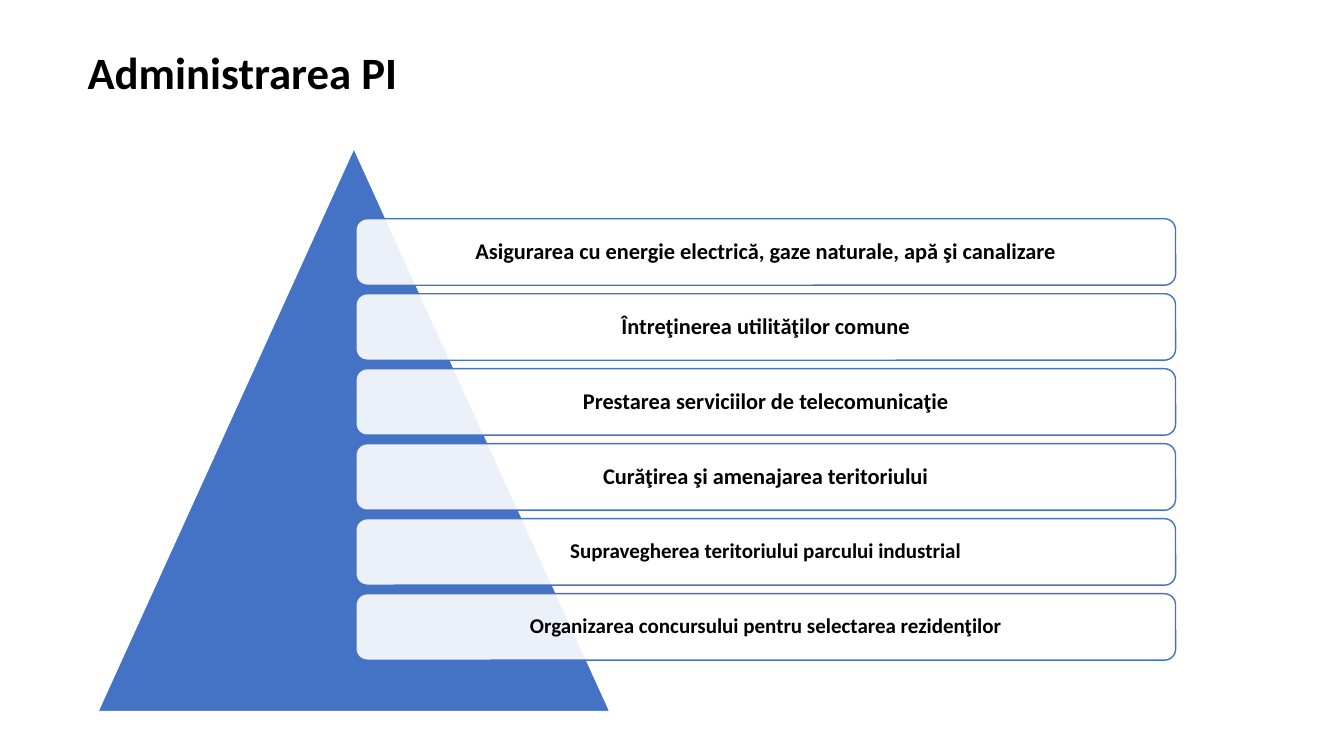
"""Builds the slide on park administration: a triangle with a stack of service bars."""
import pptx
import pptx.dml.color
import pptx.enum.shapes
import pptx.enum.text
import pptx.oxml.ns
import pptx.util
from lxml import etree

Inches = pptx.util.Inches
Pt = pptx.util.Pt
Shape = pptx.enum.shapes.MSO_SHAPE
Align = pptx.enum.text.PP_ALIGN

TITLE = "Administrarea PI"
SERVICES = [
    ("Asigurarea cu energie electrică, gaze naturale, apă şi canalizare", 16),
    ("Întreţinerea utilităţilor comune", 16),
    ("Prestarea serviciilor de telecomunicaţie", 16),
    ("Curăţirea şi amenajarea teritoriului", 16),
    ("Supravegherea teritoriului parcului industrial", 15),
    ("Organizarea concursului pentru selectarea rezidenţilor", 15),
]
BLUE, WHITE, BLACK = "4472C4", "FFFFFF", "000000"
TITLE_PLACE = (0.77, 0.34, 10.48, 0.8)
TRIANGLE_PLACE = (0.97, 1.47, 5.08, 5.59)
BAR_LEFT, BAR_WIDTH, BAR_HEIGHT = 3.53, 8.13, 0.66
FIRST_TOP, LAST_TOP = 2.17, 5.89
BAR_OPACITY = 90


def color(value):
    return pptx.dml.color.RGBColor.from_string(value)


def set_all(target, values):
    for name, value in values.items():
        setattr(target, name, value)


def write(box, text, size, align, inset):
    frame = box.text_frame
    set_all(frame, {
        "word_wrap": True,
        "vertical_anchor": pptx.enum.text.MSO_ANCHOR.MIDDLE,
        **{f"margin_{side}": Inches(inset[side in ("top", "bottom")])
           for side in ("left", "right", "top", "bottom")},
    })
    para = frame.paragraphs[0]
    set_all(para, {"alignment": align, "line_spacing": 0.9})
    span = para.add_run()
    span.text = text
    set_all(span.font, {"name": "Calibri", "size": Pt(size), "bold": True})
    span.font.color.rgb = color(BLACK)


def add_block(page, kind, place, fill, line):
    block = page.shapes.add_shape(kind, *map(Inches, place))
    block.shadow.inherit = False
    block.fill.solid()
    block.fill.fore_color.rgb = color(fill)
    block.line.color.rgb = color(line)
    block.line.width = Pt(1)
    return block


def set_opacity(block, percent):
    tone = block.fill._xPr.find(".//" + pptx.oxml.ns.qn("a:srgbClr"))
    alpha = etree.SubElement(tone, pptx.oxml.ns.qn("a:alpha"))
    alpha.set("val", str(percent * 1000))


def main():
    deck = pptx.Presentation()
    set_all(deck, {"slide_width": Inches(13.33), "slide_height": Inches(7.5)})
    page = deck.slides.add_slide(deck.slide_layouts[6])

    title = page.shapes.add_textbox(*map(Inches, TITLE_PLACE))
    write(title, TITLE, 32, Align.LEFT, (0.1, 0.05))
    add_block(page, Shape.ISOSCELES_TRIANGLE, TRIANGLE_PLACE, BLUE, WHITE)

    pitch = (LAST_TOP - FIRST_TOP) / (len(SERVICES) - 1)
    for index, (service, size) in enumerate(SERVICES):
        place = (BAR_LEFT, FIRST_TOP + index * pitch, BAR_WIDTH, BAR_HEIGHT)
        bar = add_block(page, Shape.ROUNDED_RECTANGLE, place, WHITE, BLUE)
        set_opacity(bar, BAR_OPACITY)
        write(bar, service, size, Align.CENTER, (0.07, 0.07))

    deck.save("out.pptx")


if __name__ == "__main__":
    main()
